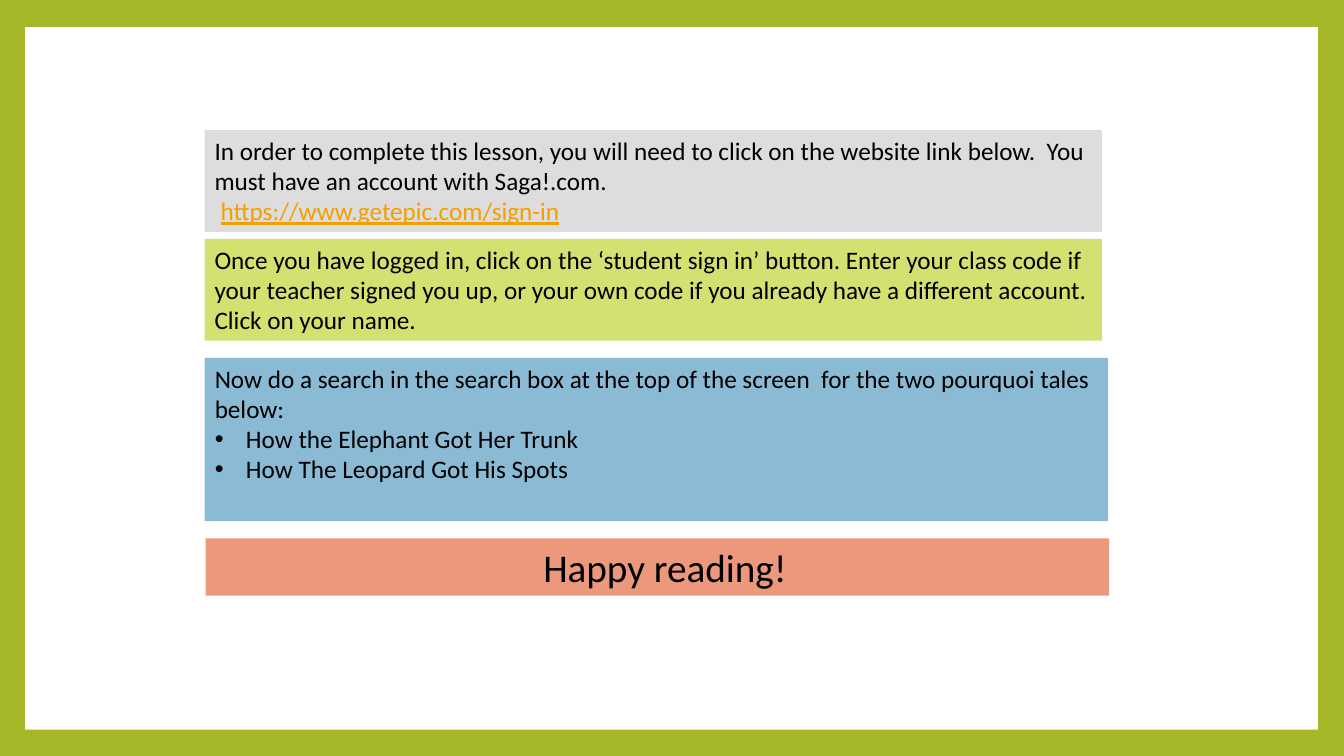
from dataclasses import dataclass

import lxml.etree
import pptx
import pptx.dml.color
import pptx.enum.shapes
import pptx.enum.text
import pptx.oxml.ns
import pptx.util

Inches = pptx.util.Inches


@dataclass(frozen=True)
class Theme:
    font: str = "Calibri"
    body_size: int = 18
    closing_size: int = 28
    ink: str = "000000"
    link: str = "F59E00"
    border: str = "A6B727"
    page: str = "FFFFFF"
    account: str = "DDDDDD"
    sign_in: str = "D3E171"
    search: str = "8ABAD4"
    closing: str = "EC987D"


def rgb(value):
    return pptx.dml.color.RGBColor.from_string(value)


class LessonSlide:
    def __init__(self, slide, theme):
        self.slide = slide
        self.theme = theme
        slide.background.fill.solid()
        slide.background.fill.fore_color.rgb = rgb(theme.border)

    def panel(self, left, top, width, height, color):
        shape = self.slide.shapes.add_shape(
            pptx.enum.shapes.MSO_SHAPE.RECTANGLE,
            Inches(left), Inches(top), Inches(width), Inches(height))
        shape.shadow.inherit = False
        shape.line.fill.background()
        return self.fill(shape, color)

    def placeholder(self, holder, left, top, width, height, color):
        holder.left, holder.top = Inches(left), Inches(top)
        holder.width, holder.height = Inches(width), Inches(height)
        return self.fill(holder, color)

    def fill(self, shape, color):
        shape.fill.solid()
        shape.fill.fore_color.rgb = rgb(color)
        frame = shape.text_frame
        frame.word_wrap = True
        frame.auto_size = pptx.enum.text.MSO_AUTO_SIZE.NONE
        frame.vertical_anchor = pptx.enum.text.MSO_ANCHOR.TOP
        return frame

    def paragraph(self, frame, text, size=None, color=None, indent=0,
                  bullet=None, underline=None, centered=False):
        """Fill the frame's empty first paragraph, or add one below."""
        paragraph = frame.paragraphs[0] if not frame.text else frame.add_paragraph()
        paragraph.text = text
        align = pptx.enum.text.PP_ALIGN
        paragraph.alignment = align.CENTER if centered else align.LEFT
        paragraph.space_before = pptx.util.Pt(0)
        properties = paragraph._p.get_or_add_pPr()
        properties.set("marL", str(Inches(indent)))
        properties.set("indent", str(Inches(-indent if bullet else 0)))
        tag = pptx.oxml.ns.qn("a:buChar" if bullet else "a:buNone")
        mark = lxml.etree.SubElement(properties, tag)
        if bullet:
            mark.set("char", bullet)
        font = paragraph.font
        font.name = self.theme.font
        font.size = pptx.util.Pt(size or self.theme.body_size)
        font.color.rgb = rgb(color or self.theme.ink)
        font.underline = underline


def main():
    theme = Theme()
    deck = pptx.Presentation()
    deck.slide_width, deck.slide_height = Inches(13.33), Inches(7.5)
    slide = deck.slides.add_slide(deck.slide_layouts[1])
    lesson = LessonSlide(slide, theme)
    closing_holder, search_holder = slide.placeholders

    lesson.panel(0.25, 0.27, 12.82, 6.97, theme.page)
    # Placeholders go in front of the white page.
    for holder in (search_holder, closing_holder):
        slide.shapes._spTree.append(holder._element)

    account = lesson.panel(2.03, 1.29, 8.9, 1.01, theme.account)
    lesson.paragraph(account, "In order to complete this lesson, you will need to click on "
                     "the website link below.  You must have an account with Saga!.com.")
    lesson.paragraph(account, "https://www.getepic.com/sign-in", color=theme.link,
                     indent=0.06, underline=True)

    sign_in = lesson.panel(2.03, 2.37, 8.9, 1.01, theme.sign_in)
    lesson.paragraph(sign_in, "Once you have logged in, click on the ‘student sign in’ button. "
                     "Enter your class code if your teacher signed you up, or your own code "
                     "if you already have a different account. Click on your name.")

    search = lesson.placeholder(search_holder, 2.03, 3.55, 8.96, 1.62, theme.search)
    lesson.paragraph(search, "Now do a search in the search box at the top of the screen  "
                     "for the two pourquoi tales below:")
    for tale in ("How the Elephant Got Her Trunk", "How The Leopard Got His Spots"):
        lesson.paragraph(search, tale, indent=0.31, bullet="•")

    closing = lesson.placeholder(closing_holder, 2.04, 5.34, 8.96, 0.57, theme.closing)
    closing.margin_left = Inches(0.25)
    lesson.paragraph(closing, "Happy reading!", size=theme.closing_size, centered=True)

    deck.save("out.pptx")


if __name__ == "__main__":
    main()
